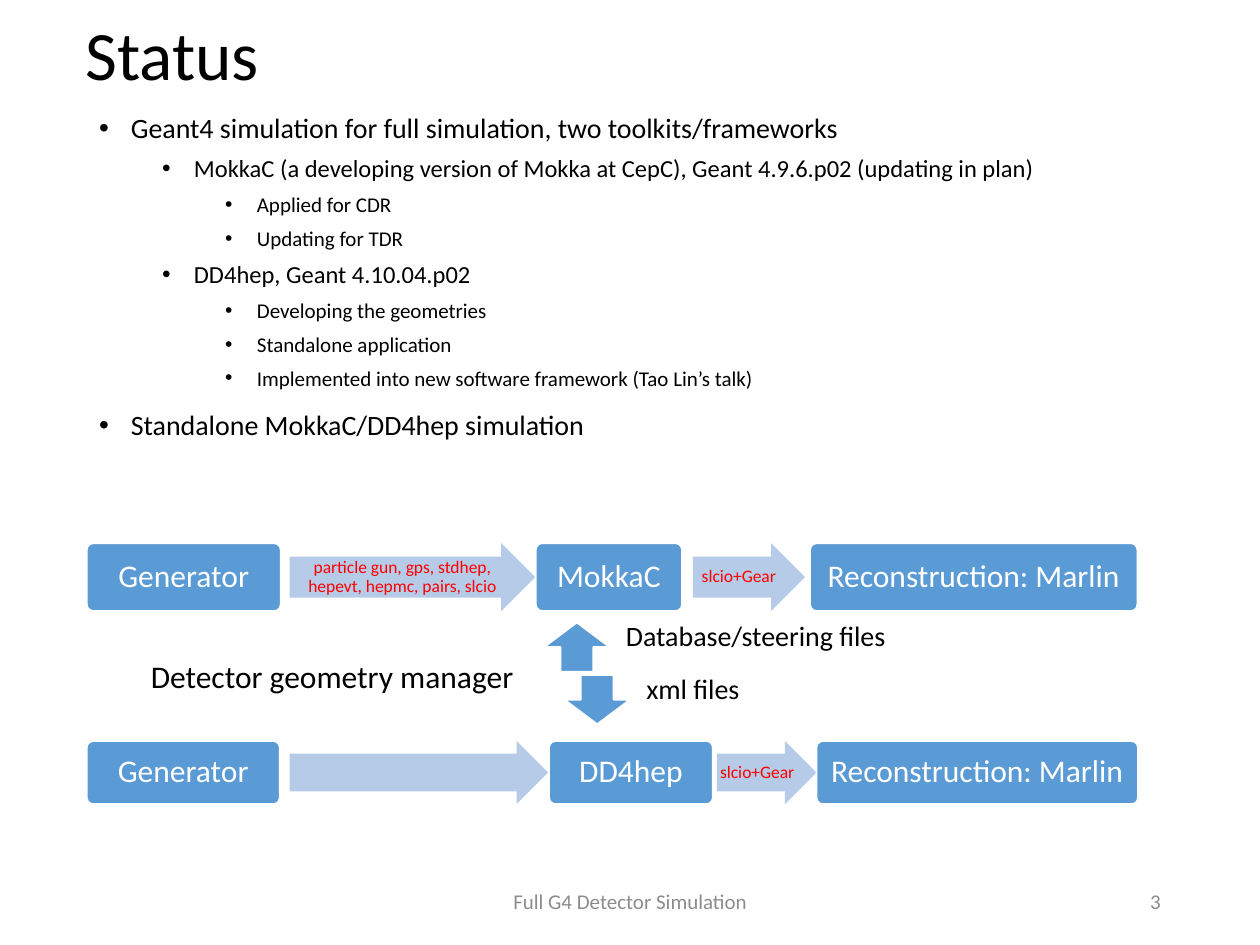
from dataclasses import dataclass
from typing import Any

from lxml.etree import SubElement
from pptx import Presentation
from pptx.dml.color import RGBColor
from pptx.enum.shapes import MSO_SHAPE
from pptx.enum.text import MSO_ANCHOR, PP_ALIGN
from pptx.oxml.ns import qn
from pptx.util import Cm, Pt

BLACK = RGBColor(0x00, 0x00, 0x00)
WHITE = RGBColor(0xFF, 0xFF, 0xFF)
GREY = RGBColor(0x8C, 0x8C, 0x8C)
RED = RGBColor(0xFF, 0x00, 0x00)
BLUE = RGBColor(0x5B, 0x9B, 0xD5)
PALE = RGBColor(0xB5, 0xCB, 0xE7)
FACE = "Calibri"

MID = {"vertical_anchor": MSO_ANCHOR.MIDDLE, "word_wrap": True}
TOP = {"vertical_anchor": MSO_ANCHOR.TOP, "word_wrap": True}
FREE = {"word_wrap": False}
LEFT = {"alignment": PP_ALIGN.LEFT}
TIGHT = {"alignment": PP_ALIGN.LEFT, "line_spacing": 0.9}
INNER = {"alignment": PP_ALIGN.CENTER, "line_spacing": 0.9}
CENTER = {"alignment": PP_ALIGN.CENTER}
RIGHT = {"alignment": PP_ALIGN.RIGHT}


def pad(left: float, top: float, right: float, base: float) -> dict[str, Any]:
    sides = {"left": left, "top": top, "right": right, "bottom": base}
    return {f"margin_{side}": Cm(size) for side, size in sides.items()}


@dataclass(frozen=True)
class Area:
    left: float
    top: float
    width: float
    height: float

    def cm(self) -> list[Cm]:
        return [Cm(n) for n in (self.left, self.top, self.width, self.height)]


@dataclass(frozen=True)
class Look:
    kind: MSO_SHAPE
    fill: RGBColor
    edge: bool
    bends: tuple[float, ...]
    frame: dict[str, Any]
    size: float
    ink: RGBColor


@dataclass(frozen=True)
class Step:
    look: Look
    left: float
    width: float
    words: str = ""


@dataclass(frozen=True)
class Chain:
    top: float
    height: float
    steps: tuple[Step, ...]


@dataclass(frozen=True)
class Source:
    kind: MSO_SHAPE
    left: float
    top: float
    words: str


@dataclass(frozen=True)
class Tier:
    size: float
    gap: float
    left: float


BOX = Look(MSO_SHAPE.ROUNDED_RECTANGLE, BLUE, True, (0.1,),
           MID | pad(0.18, 0.18, 0.18, 0.18), 18, WHITE)
ARROW = Look(MSO_SHAPE.RIGHT_ARROW, PALE, False, (0.6, 0.5),
             MID | pad(0, 0, 0, 0), 10, RED)

CHAINS = (
    Chain(10.95, 1.37, (
        Step(BOX, 1.75, 3.91, "Generator"),
        Step(ARROW, 5.84, 4.95,
             "particle gun, gps, stdhep, hepevt, hepmc, pairs, slcio"),
        Step(BOX, 10.8, 2.95, "MokkaC"),
        Step(ARROW, 13.97, 2.26, "slcio+Gear"),
        Step(BOX, 16.33, 6.6, "Reconstruction: Marlin"),
    )),
    Chain(14.94, 1.27, (
        Step(BOX, 1.75, 3.89, "Generator"),
        Step(ARROW, 5.84, 5.21),
        Step(BOX, 11.07, 3.3, "DD4hep"),
        Step(ARROW, 14.45, 2.01, "slcio+Gear"),
        Step(BOX, 16.46, 6.48, "Reconstruction: Marlin"),
    )),
)

SOURCES = (
    Source(MSO_SHAPE.UP_ARROW, 10.97, 12.55, "Database/steering files"),
    Source(MSO_SHAPE.DOWN_ARROW, 11.38, 13.61, "xml files"),
)

TIERS = (Tier(16, 10, 0.64), Tier(14, 5, 1.91), Tier(12, 5, 3.18))
POINTS = (
    (0, "Geant4 simulation for full simulation, two toolkits/frameworks"),
    (1, "MokkaC (a developing version of Mokka at CepC), "
        "Geant 4.9.6.p02 (updating in plan)"),
    (2, "Applied for CDR"),
    (2, "Updating for TDR"),
    (1, "DD4hep, Geant 4.10.04.p02"),
    (2, "Developing the geometries"),
    (2, "Standalone application"),
    (2, "Implemented into new software framework (Tao Lin’s talk)"),
    (0, "Standalone MokkaC/DD4hep simulation"),
)


def apply(item: Any, values: dict[str, Any]) -> None:
    for name, value in values.items():
        setattr(item, name, value)


def write(para: Any, words: str, size: float, ink: RGBColor,
          form: dict[str, Any]) -> None:
    apply(para, form)
    run = para.add_run()
    run.text = words
    apply(run.font, {"name": FACE, "size": Pt(size)})
    run.font.color.rgb = ink


def add_text(slide: Any, area: Area, words: str, size: float, ink: RGBColor,
             frame: dict[str, Any], form: dict[str, Any]) -> None:
    body = slide.shapes.add_textbox(*area.cm()).text_frame
    apply(body, frame)
    write(body.paragraphs[0], words, size, ink, form)


def add_form(slide: Any, kind: MSO_SHAPE, area: Area, fill: RGBColor,
             edge: bool) -> Any:
    shape = slide.shapes.add_shape(kind, *area.cm())
    shape.shadow.inherit = False
    shape.fill.solid()
    shape.fill.fore_color.rgb = fill
    if edge:
        shape.line.color.rgb = WHITE
        shape.line.width = Pt(1)
    else:
        shape.line.fill.background()
    return shape


def add_chain(slide: Any, chain: Chain) -> None:
    for step in chain.steps:
        look = step.look
        area = Area(step.left, chain.top, step.width, chain.height)
        shape = add_form(slide, look.kind, area, look.fill, look.edge)
        for place, bend in enumerate(look.bends):
            shape.adjustments[place] = bend
        if step.words:
            body = shape.text_frame
            apply(body, look.frame)
            write(body.paragraphs[0], step.words, look.size, look.ink, INNER)


def add_source(slide: Any, source: Source) -> None:
    add_form(slide, source.kind, Area(source.left, source.top, 1.32, 0.99),
             BLUE, True)
    add_text(slide, Area(source.left + 1.35, source.top, 6.99, 0.99),
             source.words, 16, BLACK, TOP | pad(0.3, 0, 0.3, 0.3), TIGHT)


def add_points(slide: Any, area: Area) -> None:
    body = slide.shapes.add_textbox(*area.cm()).text_frame
    apply(body, TOP)
    for place, (level, words) in enumerate(POINTS):
        tier = TIERS[level]
        para = body.add_paragraph() if place else body.paragraphs[0]
        props = para._p.get_or_add_pPr()
        props.set("marL", str(Cm(tier.left)))
        props.set("indent", str(-Cm(0.64)))
        SubElement(props, qn("a:buFont"), typeface="Arial")
        SubElement(props, qn("a:buChar"), char="•")
        gap = {"space_before": Pt(tier.gap)} if place else {}
        write(para, words, tier.size, BLACK, LEFT | {"level": level} | gap)


def main() -> None:
    deck = Presentation()
    apply(deck, {"slide_width": Cm(25.4), "slide_height": Cm(19.05)})
    slide = deck.slides.add_slide(deck.slide_layouts[6])
    add_points(slide, Area(1.75, 2.11, 21.9, 7.29))
    add_text(slide, Area(1.47, 0.25, 21.9, 1.83), "Status", 39.6, BLACK,
             MID, TIGHT)
    add_text(slide, Area(8.41, 17.65, 8.59, 1.02),
             "Full G4 Detector Simulation", 12, GREY, MID, CENTER)
    add_text(slide, Area(17.93, 17.65, 5.72, 1.02), "3", 12, GREY, MID, RIGHT)
    for chain in CHAINS:
        add_chain(slide, chain)
    for source in SOURCES:
        add_source(slide, source)
    add_text(slide, Area(2.79, 13.13, 8.61, 1.02),
             "Detector geometry manager", 18, BLACK, FREE, LEFT)
    deck.save("out.pptx")


if __name__ == "__main__":
    main()
